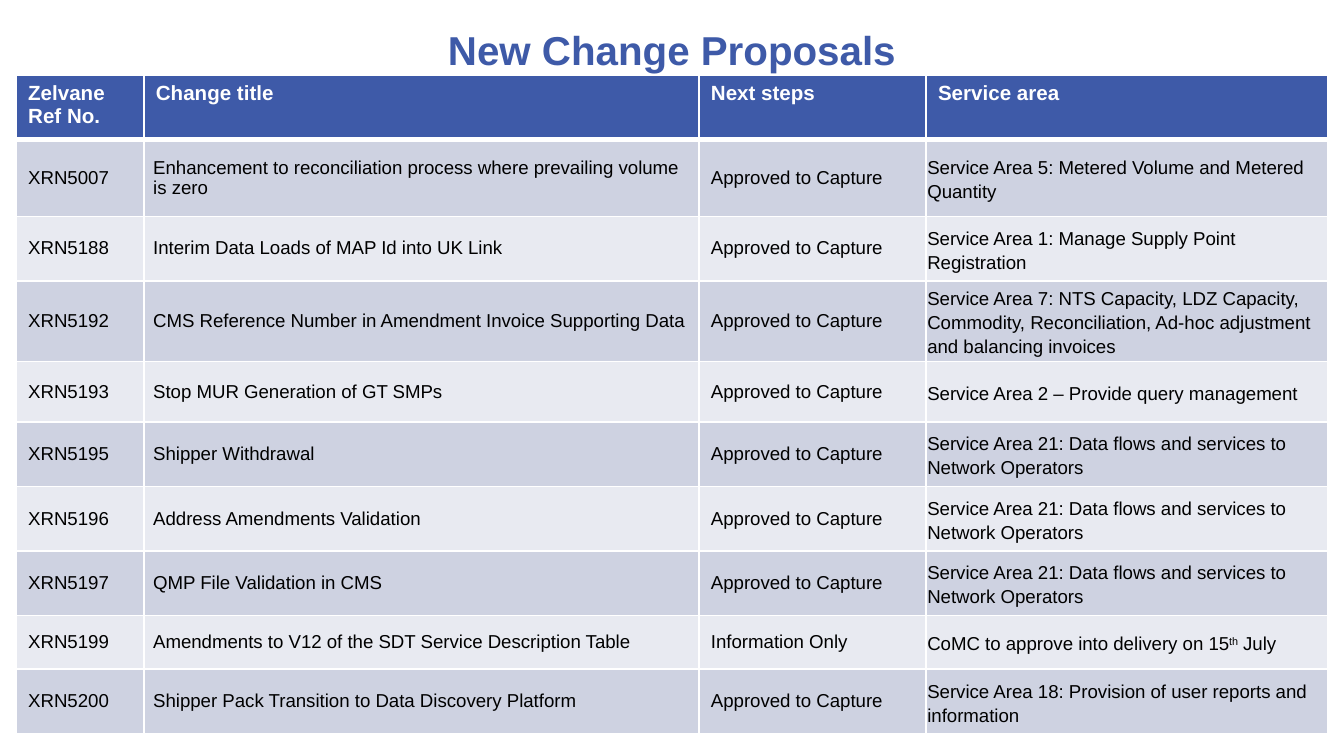
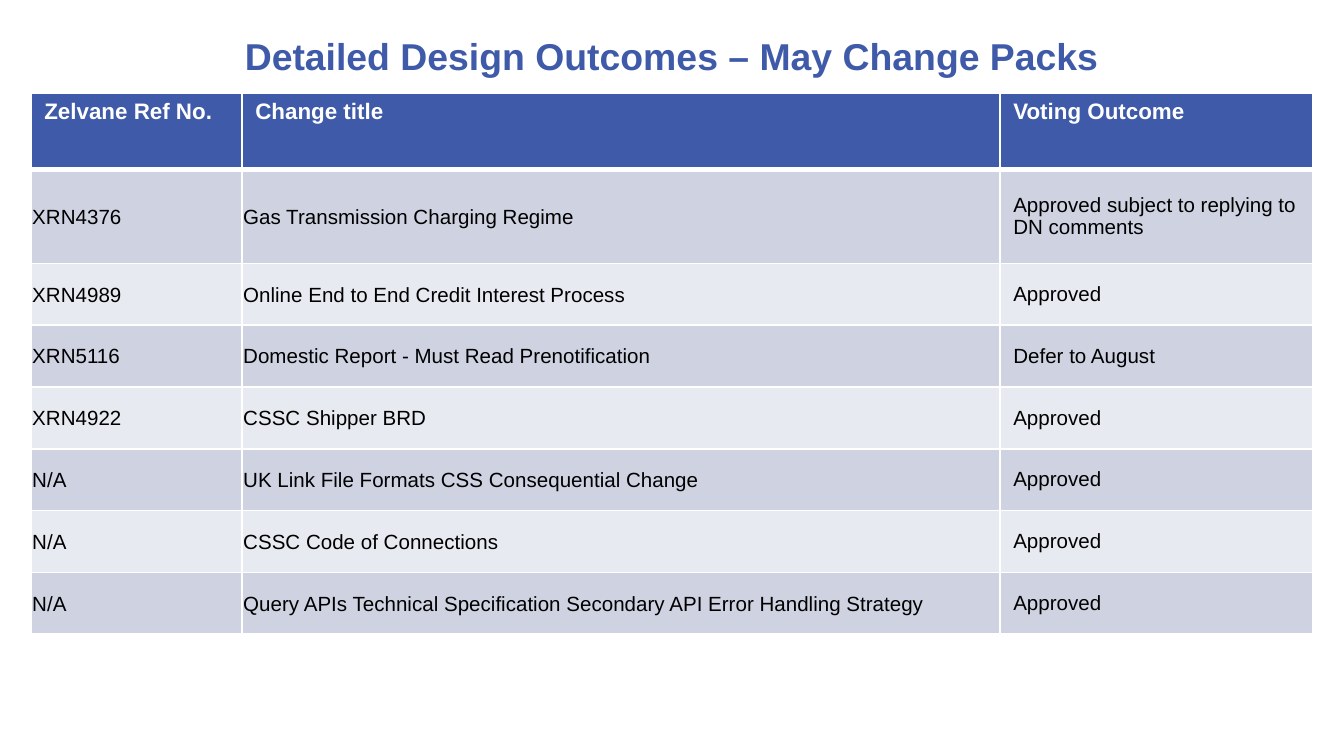
from dataclasses import dataclass

from lxml import etree
from pptx import Presentation
from pptx.dml.color import RGBColor
from pptx.enum.text import MSO_ANCHOR as Anchor, MSO_AUTO_SIZE as AutoSize, PP_ALIGN as Align
from pptx.oxml.ns import qn
from pptx.util import Inches, Pt

FONT = "Arial"
COLOURS = {
    "blue": "3E5AA8",
    "white": "FFFFFF",
    "black": "000000",
    "odd_band": "CED2E1",
    "even_band": "E8EAF1",
}


@dataclass
class Column:
    """Width and cell insets (left, top, right, bottom) in inches."""
    heading: str
    width: float
    insets: tuple
    line_spacing: float = None


NORMAL = (0.1, 0.05, 0.1, 0.05)
SNUG = (0.09, 0.05, 0.09, 0.05)
SIDES_ONLY = (0.07, 0, 0.07, 0)
TIGHT = (0.01, 0.01, 0.01, 0)

PROPOSAL_COLUMNS = [
    Column("Zelvane Ref No.", 0.95, SNUG),
    Column("Change title", 4.13, SIDES_ONLY),
    Column("Next steps", 1.69, SNUG),
    Column("Service area", 2.99, TIGHT, 1.15),
]
CAPTURE = "Approved to Capture"
NETWORK_DATA = "Service Area 21: Data flows and services to Network Operators"
PROPOSALS = [
    ("XRN5007", "Enhancement to reconciliation process where prevailing volume is zero", CAPTURE,
     "Service Area 5: Metered Volume and Metered Quantity"),
    ("XRN5188", "Interim Data Loads of MAP Id into UK Link", CAPTURE,
     "Service Area 1: Manage Supply Point Registration"),
    ("XRN5192", "CMS Reference Number in Amendment Invoice Supporting Data", CAPTURE,
     "Service Area 7: NTS Capacity, LDZ Capacity, Commodity, Reconciliation, "
     "Ad-hoc adjustment and balancing invoices"),
    ("XRN5193", "Stop MUR Generation of GT SMPs", CAPTURE,
     "Service Area 2 – Provide query management"),
    ("XRN5195", "Shipper Withdrawal", CAPTURE, NETWORK_DATA),
    ("XRN5196", "Address Amendments Validation", CAPTURE, NETWORK_DATA),
    ("XRN5197", "QMP File Validation in CMS", CAPTURE, NETWORK_DATA),
    ("XRN5199", "Amendments to V12 of the SDT Service Description Table", "Information Only",
     "CoMC to approve into delivery on 15^th^ July"),
    ("XRN5200", "Shipper Pack Transition to Data Discovery Platform", CAPTURE,
     "Service Area 18: Provision of user reports and information"),
]
PROPOSAL_HEIGHTS = [0.48, 0.57, 0.48, 0.6, 0.45, 0.48, 0.48, 0.48, 0.4, 0.48]

OUTCOME_COLUMNS = [
    Column("Zelvane Ref No.", 1.57, TIGHT),
    Column("Change title", 5.64, TIGHT),
    Column("Voting Outcome", 2.33, NORMAL),
]
OUTCOMES = [
    ("XRN4376", "Gas Transmission Charging Regime", "Approved subject to replying to DN comments"),
    ("XRN4989", "Online End to End Credit Interest Process", "Approved"),
    ("XRN5116", "Domestic Report - Must Read Prenotification", "Defer to August"),
    ("XRN4922", "CSSC Shipper BRD", "Approved"),
    ("N/A", "UK Link File Formats CSS Consequential Change", "Approved"),
    ("N/A", "CSSC Code of Connections", "Approved"),
    ("N/A", "Query APIs Technical Specification Secondary API Error Handling Strategy", "Approved"),
]
OUTCOME_HEIGHTS = [0.57, 0.7] + [0.46] * 6


def colour(name):
    return RGBColor.from_string(COLOURS[name])


def add_text(para, text, size, colour_name, bold=False):
    """Add runs to a paragraph; text between carets is superscript."""
    for index, part in enumerate(text.split("^")):
        span = para.add_run()
        span.text = part
        span.font.name = FONT
        span.font.size = Pt(size)
        span.font.bold = bold
        span.font.color.rgb = colour(colour_name)
        if index % 2:
            span.font._element.set("baseline", "30000")


def set_borders(cell, row):
    """Draw white edges, with a heavier rule below the heading row."""
    properties = cell._tc.get_or_add_tcPr()
    widths = {"lnL": 1, "lnR": 1, "lnT": 3 if row == 1 else 1, "lnB": 3 if row == 0 else 1}
    for edge, width in widths.items():
        line = etree.SubElement(properties, qn(f"a:{edge}"), w=str(Pt(width)))
        fill = etree.SubElement(line, qn("a:solidFill"))
        etree.SubElement(fill, qn("a:srgbClr"), val=COLOURS["white"])


def fill_cell(cell, text, row, insets, size, line_spacing=None):
    heading = row == 0
    set_borders(cell, row)
    cell.fill.solid()
    band = "odd_band" if row % 2 else "even_band"
    cell.fill.fore_color.rgb = colour("blue" if heading else band)
    cell.margin_left, cell.margin_top, cell.margin_right, cell.margin_bottom = map(Inches, insets)
    cell.vertical_anchor = Anchor.TOP if heading else Anchor.MIDDLE
    para = cell.text_frame.paragraphs[0]
    if line_spacing:
        para.line_spacing = line_spacing
    add_text(para, text, size, "white" if heading else "black", bold=heading)


def add_change_table(page, left, top, columns, records, heights, heading_insets, body_size):
    width = sum(column.width for column in columns)
    box = [Inches(length) for length in (left, top, width, sum(heights))]
    table = page.shapes.add_table(len(heights), len(columns), *box).table
    for row, height in enumerate(heights):
        table.rows[row].height = Inches(height)
    for index, column in enumerate(columns):
        table.columns[index].width = Inches(column.width)
        fill_cell(table.cell(0, index), column.heading, 0, heading_insets, body_size + 1)
        for row, record in enumerate(records, 1):
            fill_cell(table.cell(row, index), record[index], row,
                      column.insets, body_size, column.line_spacing)


def add_titled_page(deck, title, box, size):
    page = deck.slides.add_slide(deck.slide_layouts[5])
    holder = page.shapes.title
    holder.left, holder.top, holder.width, holder.height = map(Inches, box)
    frame = holder.text_frame
    frame.word_wrap = True
    frame.auto_size = AutoSize.NONE
    frame.vertical_anchor = Anchor.MIDDLE
    para = frame.paragraphs[0]
    para.alignment = Align.CENTER
    add_text(para, title, size, "blue", bold=True)
    return page


def main():
    deck = Presentation()
    deck.slide_width = Inches(10)
    deck.slide_height = deck.slide_width * 9 // 16

    page = add_titled_page(deck, "New Change Proposals", (0.5, 0.17, 9, 0.39), 21.6)
    add_change_table(page, 0.12, 0.56, PROPOSAL_COLUMNS, PROPOSALS, PROPOSAL_HEIGHTS, SNUG, 10)

    page = add_titled_page(deck, "Detailed Design Outcomes – May Change Packs",
                           (0.12, 0.14, 9.76, 0.55), 20)
    add_change_table(page, 0.23, 0.69, OUTCOME_COLUMNS, OUTCOMES, OUTCOME_HEIGHTS, NORMAL, 11)

    deck.save("out.pptx")


if __name__ == "__main__":
    main()
